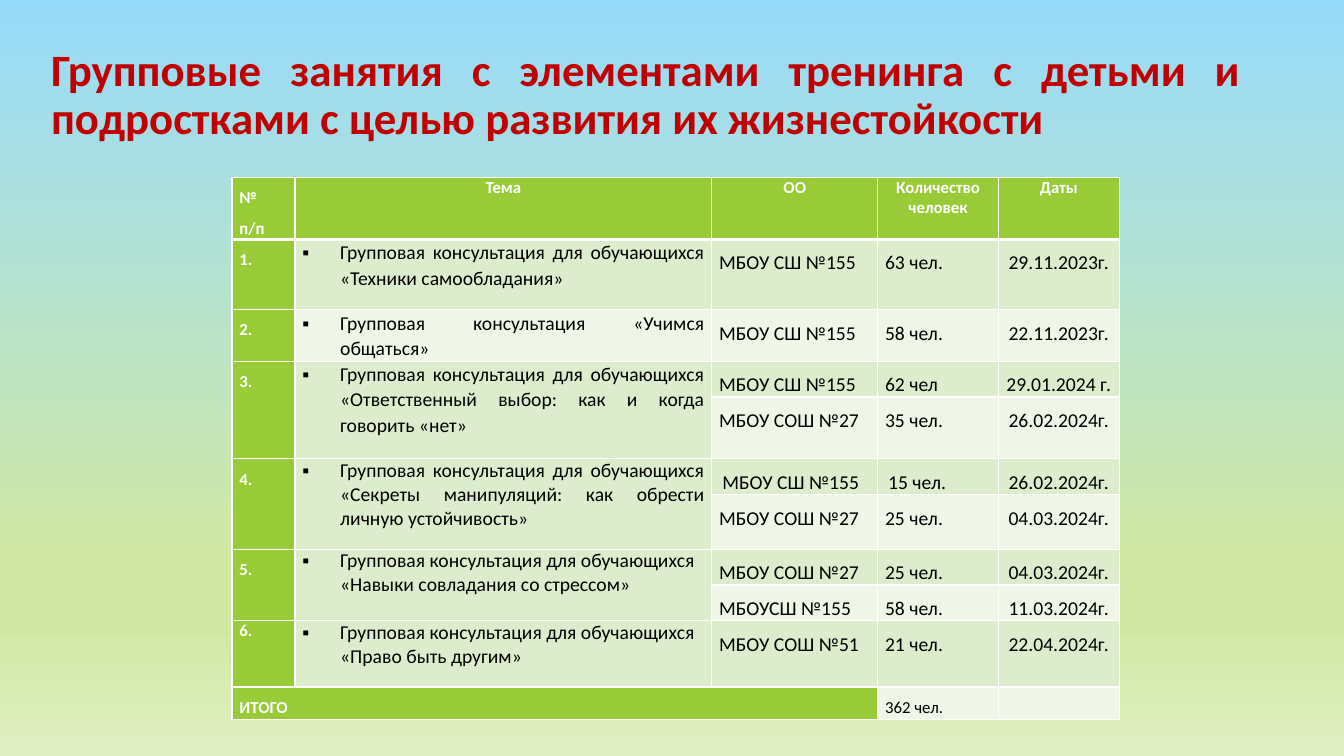
"""Build the slide on group training sessions for children and teenagers."""
from dataclasses import dataclass
from lxml.etree import SubElement
from pptx import Presentation
from pptx.dml.color import RGBColor
from pptx.enum.text import MSO_ANCHOR, PP_ALIGN
from pptx.oxml.ns import qn
from pptx.slide import Slide
from pptx.table import Table, _Cell
from pptx.text.text import _Paragraph
from pptx.util import Pt

PX = 9525
LEFT, MID, FULL = PP_ALIGN.LEFT, PP_ALIGN.CENTER, PP_ALIGN.JUSTIFY


@dataclass(frozen=True)
class Theme:
    font: str = "Calibri"
    red: str = "C00000"
    green: str = "99CB38"
    dark: str = "DEECCE"
    light: str = "EFF6E8"
    white: str = "FFFFFF"
    black: str = "000000"
    sky: tuple = ((0, "97DBFB"), (74, "D1E8A5"), (83, "D1E8A5"), (100, "E0EFC3"))
    title: int = 32
    body: int = 14
    small: int = 12


@dataclass(frozen=True)
class Style:
    size: int
    color: str
    bold: bool = False
    align: PP_ALIGN = FULL
    lead: float = 1.5
    left: int = 0
    hang: int = 0


@dataclass(frozen=True)
class Visit:
    school: str
    count: str
    date: str
    shift: int = 0


@dataclass(frozen=True)
class Topic:
    text: str
    visits: tuple[Visit, ...]
    align: PP_ALIGN = FULL
    lead: float = 1.0
    top: float = 1.5


LOOK = Theme()
HEAD = Style(LOOK.small, LOOK.white, True, MID, 1.0)
TITLE = "Групповые занятия с элементами тренинга с детьми и подростками с целью развития их жизнестойкости"
GROUP = "Групповая консультация для обучающихся "
COLS = (60, 397, 158, 115, 115)
ROWS = (59, 67, 49, 34, 59, 34, 52, 34, 34, 63, 31)
HEADS = ("Тема", "ОО", "Количество человек", "Даты")
TOPICS = (
    Topic(GROUP + "«Техники самообладания»",
          (Visit("МБОУ СШ №155", "63 чел.", "29.11.2023г."),), lead=1.07),
    Topic("Групповая консультация «Учимся общаться»",
          (Visit("МБОУ СШ №155", "58 чел.", "22.11.2023г."),), lead=1.07),
    Topic(GROUP + "«Ответственный выбор: как и когда говорить «нет»",
          (Visit("МБОУ СШ №155", "62 чел", "29.01.2024 г."),
           Visit("МБОУ СОШ №27", "35 чел.", "26.02.2024г.")), lead=1.07),
    Topic(GROUP + "«Секреты манипуляций: как обрести личную устойчивость»",
          (Visit("МБОУ СШ №155", "15 чел.", "26.02.2024г.", 3),
           Visit("МБОУ СОШ №27", "25 чел.", "04.03.2024г."))),
    Topic(GROUP + "«Навыки совладания со стрессом»",
          (Visit("МБОУ СОШ №27", "25 чел.", "04.03.2024г."),
           Visit("МБОУСШ №155", "58 чел.", "11.03.2024г.")), LEFT),
    Topic(GROUP + "«Право быть другим»",
          (Visit("МБОУ СОШ №51", "21 чел.", "22.04.2024г."),), LEFT, top=1.0),
)


def write(para: _Paragraph, text: str, style: Style) -> None:
    """Add one styled run to a paragraph."""
    para.alignment, para.line_spacing = style.align, style.lead
    run = para.add_run()
    run.text = text
    font = run.font
    font.name, font.size, font.bold = LOOK.font, Pt(style.size), style.bold
    font.color.rgb = RGBColor.from_string(style.color)
    props = para._p.get_or_add_pPr()
    props.set("marL", str(style.left * PX))
    props.set("indent", str(style.hang * PX))


def put(cell: _Cell, text: str, style: Style) -> None:
    """Write text into the first paragraph of a cell."""
    write(cell.text_frame.paragraphs[0], text, style)


def mark(cell: _Cell) -> None:
    """Give a cell's paragraph a square bullet."""
    props = cell.text_frame.paragraphs[0]._p.get_or_add_pPr()
    SubElement(props, qn("a:buFont"), typeface="Arial")
    SubElement(props, qn("a:buChar"), char="▪")


def edge(cell: _Cell, side: str, width: int) -> None:
    """Draw one white border of a cell."""
    line = SubElement(cell._tc.get_or_add_tcPr(), qn(f"a:ln{side}"), w=str(Pt(width)))
    fill = SubElement(line, qn("a:solidFill"))
    SubElement(fill, qn("a:srgbClr"), val=LOOK.white)


def paint(table: Table) -> None:
    """Set margins, borders and fills of all cells."""
    for y in range(len(ROWS)):
        for x in range(len(COLS)):
            cell = table.cell(y, x)
            cell.margin_left = cell.margin_right = 7 * PX
            cell.margin_top = cell.margin_bottom = 0
            for side in "LRTB":
                thick = (y, side) in ((0, "B"), (1, "T"))
                edge(cell, side, 3 if thick else 1)
            total = y == len(ROWS) - 1 and x < 3
            band = LOOK.dark if y % 2 else LOOK.light
            color = LOOK.green if y == 0 or x == 0 or total else band
            cell.fill.solid()
            cell.fill.fore_color.rgb = RGBColor.from_string(color)


def fill(table: Table) -> None:
    """Write the header, topics and total."""
    label = Style(LOOK.small, LOOK.white, True)
    first = table.cell(0, 0)
    put(first, "№", label)
    write(first.text_frame.add_paragraph(), "п/п", label)
    for x, text in enumerate(HEADS, 1):
        put(table.cell(0, x), text, HEAD)
    row = 1
    for num, topic in enumerate(TOPICS, 1):
        last = row + len(topic.visits) - 1
        if last > row:
            for x in (0, 1):
                table.cell(row, x).merge(table.cell(last, x))
        put(table.cell(row, 0), f"{num}.",
            Style(LOOK.small, LOOK.white, True, lead=topic.top))
        put(table.cell(row, 1), topic.text,
            Style(LOOK.body, LOOK.black, False, topic.align, topic.lead, 36, -36))
        mark(table.cell(row, 1))
        for y, visit in enumerate(topic.visits, row):
            plain = Style(LOOK.body, LOOK.black, align=LEFT, hang=visit.shift)
            put(table.cell(y, 2), visit.school, plain)
            put(table.cell(y, 3), visit.count, plain)
            put(table.cell(y, 4), visit.date, Style(LOOK.body, LOOK.black, align=MID))
        row = last + 1
    table.cell(row, 0).merge(table.cell(row, 2))
    put(table.cell(row, 0), "ИТОГО", label)
    put(table.cell(row, 3), "362 чел.", Style(LOOK.small, LOOK.black))


def shade(slide: Slide) -> None:
    """Give the slide its vertical gradient."""
    back = slide.background.fill
    back.gradient()
    back.gradient_angle = 270
    stops = next(slide.element.iter(qn("a:gsLst")))
    for stop in list(stops):
        stops.remove(stop)
    for place, color in LOOK.sky:
        stop = SubElement(stops, qn("a:gs"), pos=str(place * 1000))
        SubElement(stop, qn("a:srgbClr"), val=color)


def main() -> None:
    """Create and save the deck."""
    deck = Presentation()
    deck.slide_width, deck.slide_height = 1280 * PX, 720 * PX
    slide = deck.slides.add_slide(deck.slide_layouts[5])
    shade(slide)
    title = slide.shapes.title
    title.left, title.top, title.width, title.height = (n * PX for n in (39, 38, 1153, 107))
    title.text_frame.vertical_anchor = MSO_ANCHOR.MIDDLE
    write(title.text_frame.paragraphs[0], TITLE, Style(LOOK.title, LOOK.red, True, lead=0.9))
    box = (n * PX for n in (221, 169, sum(COLS), sum(ROWS)))
    table = slide.shapes.add_table(len(ROWS), len(COLS), *box).table
    for col, width in zip(table.columns, COLS):
        col.width = width * PX
    for row, height in zip(table.rows, ROWS):
        row.height = height * PX
    paint(table)
    fill(table)
    deck.save("out.pptx")


if __name__ == "__main__":
    main()
